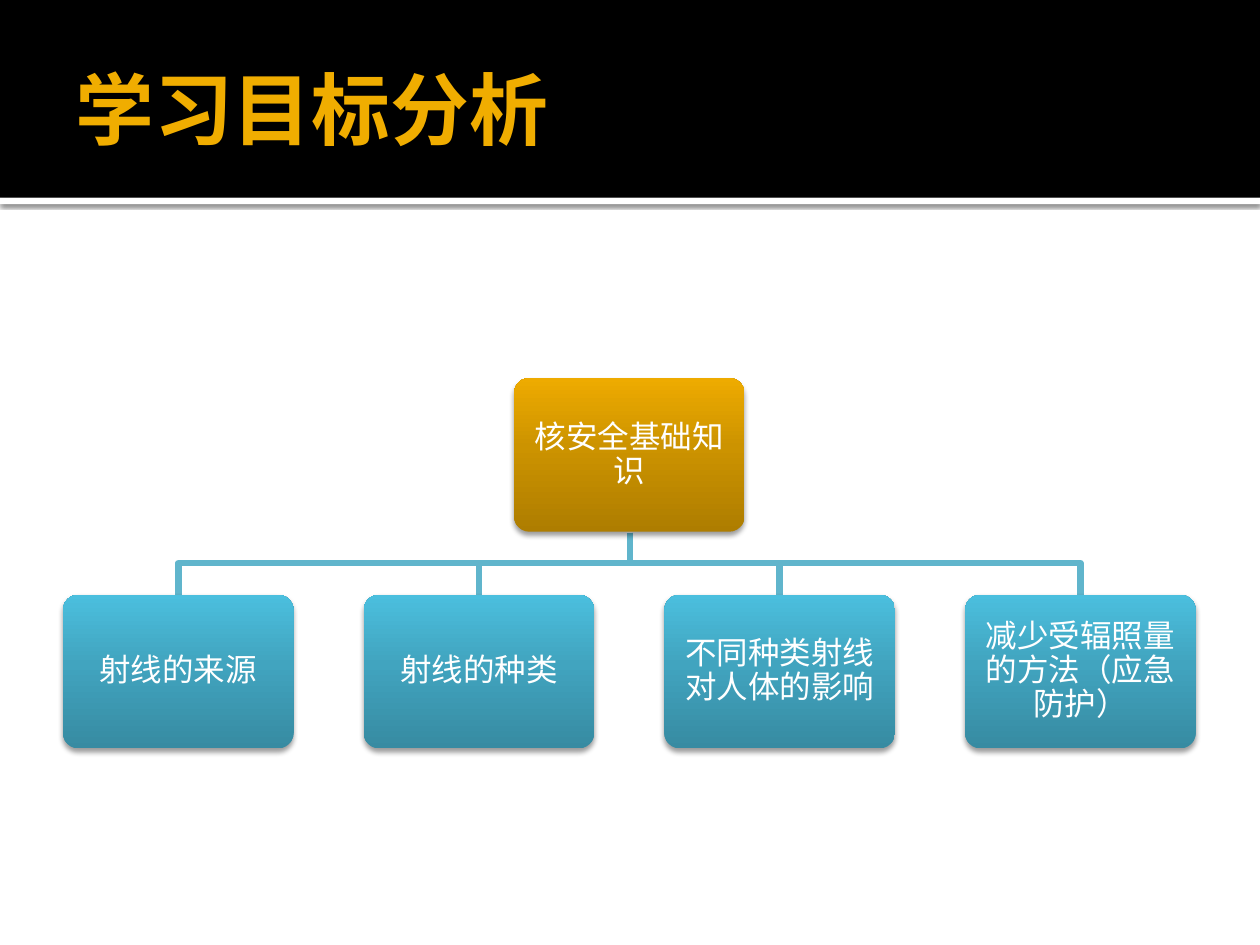
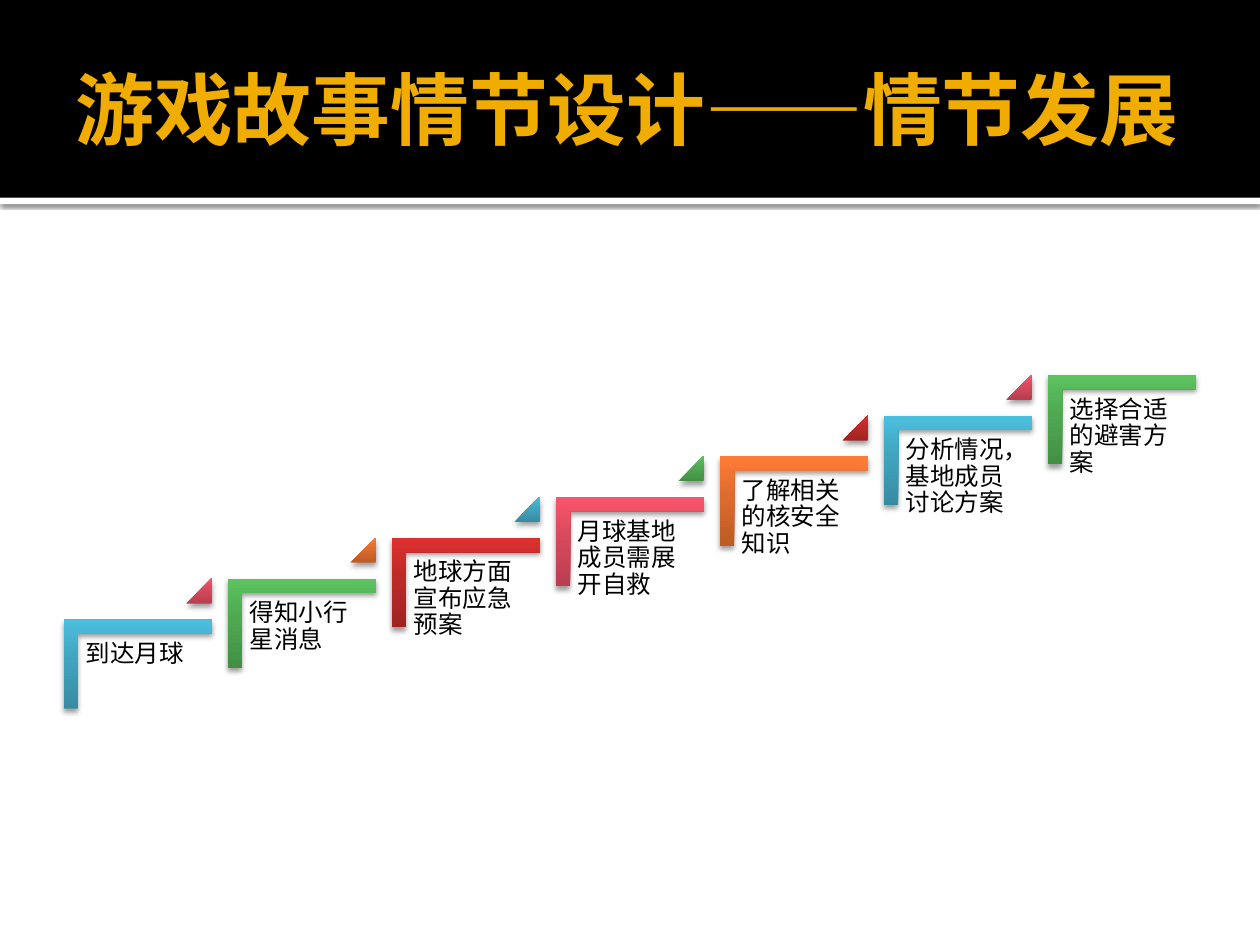
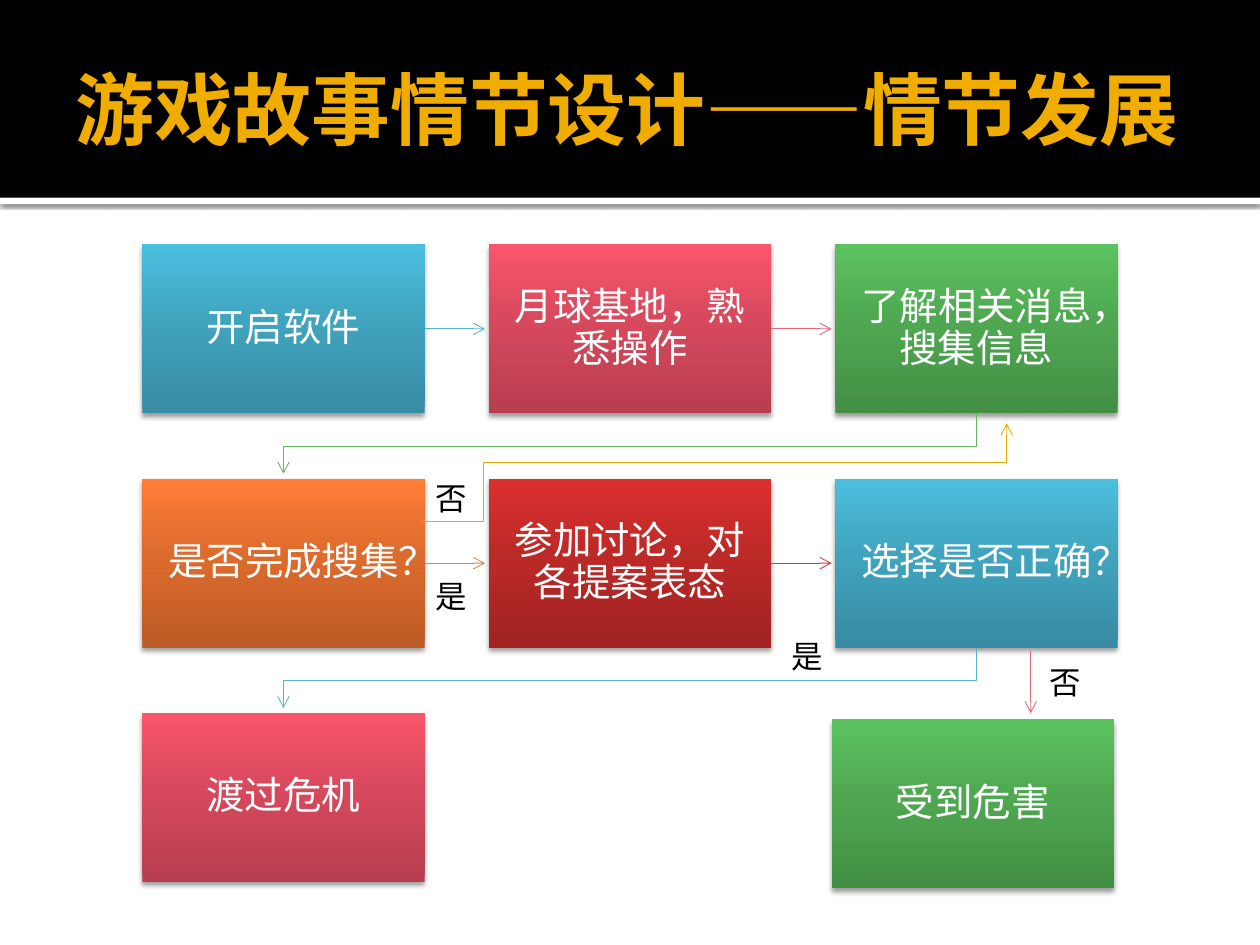
import copy
import pptx
import pptx.dml.color
import pptx.enum.shapes
import pptx.enum.text
import pptx.oxml.ns
import pptx.util
from lxml import etree

Inches = pptx.util.Inches
Pt = pptx.util.Pt
qn = pptx.oxml.ns.qn
hue = pptx.dml.color.RGBColor.from_string
Kind = pptx.enum.shapes.MSO_SHAPE
Link = pptx.enum.shapes.MSO_CONNECTOR
Align = pptx.enum.text.PP_ALIGN
Anchor = pptx.enum.text.MSO_ANCHOR

BLUE = ("378BA2", "41A4BF", "4BBFDE")
PINK = ("B73E4F", "D7495D", "FA556C")
GREEN = ("438F45", "4FA851", "5CC35F")
ORANGE = ("BC5B26", "DD6B2D", "FF7D37")
RED = ("A02322", "BC2A28", "DC302F")
GOLD = ("AE7D00", "CC9300", "EEAB00")
CYCLE = (BLUE, PINK, GREEN, ORANGE, RED)
SOFT = (38, 3.1, 2)
SIDES = ("margin_left", "margin_top", "margin_right", "margin_bottom")


def put(page, kind, box, tones=(), text="", look=None, shade=None):
    area = [Inches(n) for n in box]
    if kind is None:
        item = page.shapes.add_textbox(*area)
    else:
        item = page.shapes.add_shape(kind, *area)
        item.shadow.inherit = False
        item.line.fill.background()
    if len(tones) == 1:
        item.fill.solid()
        item.fill.fore_color.rgb = hue(tones[0])
    elif tones:
        item.fill.gradient()
        item.fill.gradient_angle = 90
        item.element.spPr.find(qn("a:gradFill")).set("rotWithShape", "0")
        first = item.element.spPr.find(".//" + qn("a:gs"))
        first.addnext(copy.deepcopy(first))
        for stop, tone, pos in zip(item.fill.gradient_stops, tones, (0, 0.55, 1)):
            stop.color.rgb = hue(tone)
            stop.position = pos
    if shade:
        alpha, blur, dist = shade
        glow = etree.SubElement(
            item.element.spPr.find(qn("a:effectLst")), qn("a:outerShdw"),
            blurRad=str(Pt(blur)), dist=str(Pt(dist)), dir="5400000", rotWithShape="0")
        black = etree.SubElement(glow, qn("a:srgbClr"), val="000000")
        etree.SubElement(black, qn("a:alpha"), val=str(alpha * 1000))
    if text:
        frame = item.text_frame
        line = frame.paragraphs[0]
        run = line.add_run()
        run.text = text
        run.font.name = "Calibri"
        run.font.color.rgb = hue(look["hue"])
        for part, key in ((frame, "frame"), (line, "line"), (run.font, "font")):
            for name, value in look[key].items():
                setattr(part, name, value)
    return item


def wire(page, dots, tone, wide=0.5, tip=True, kind=Link.STRAIGHT):
    dots = [(Inches(x), Inches(y)) for x, y in dots]
    if len(dots) == 2:
        item = page.shapes.add_connector(kind, *dots[0], *dots[1])
    else:
        pen = page.shapes.build_freeform(*dots[0])
        pen.add_line_segments(dots[1:], close=False)
        item = pen.convert_to_shape()
        item.fill.background()
    item.line.color.rgb = hue(tone)
    item.line.width = Pt(wide)
    trim = item.element.spPr
    if tip:
        etree.SubElement(trim.find(qn("a:ln")), qn("a:tailEnd"), type="arrow")
    etree.SubElement(trim, qn("a:effectLst"))
    return item


head = {
    "hue": "F0AD00",
    "frame": {"word_wrap": True, "vertical_anchor": Anchor.MIDDLE,
              **dict.fromkeys(SIDES, Inches(0.05)), "margin_left": Inches(0.1)},
    "line": {"alignment": Align.LEFT},
    "font": {"size": Pt(45), "bold": True},
}
node = {
    "hue": "FFFFFF",
    "frame": {"word_wrap": True, "vertical_anchor": Anchor.MIDDLE,
              **dict.fromkeys(SIDES, Inches(0.07))},
    "line": {"alignment": Align.CENTER, "line_spacing": 0.9},
    "font": {"size": Pt(18)},
}
stair = {
    "hue": "000000",
    "frame": {"word_wrap": True, **dict.fromkeys(SIDES, Inches(0.06))},
    "line": {"line_spacing": 0.9},
    "font": {"size": Pt(14)},
}
block = {
    **node,
    "frame": {**node["frame"], **dict.fromkeys(SIDES, Inches(0.17))},
    "font": {"size": Pt(22)},
}
label = {"hue": "000000", "frame": {"word_wrap": False}, "line": {},
         "font": {"size": Pt(18)}}

deck = pptx.Presentation()
deck.slide_width = Inches(10)
deck.slide_height = Inches(7.5)

pages = []
for title in ("学习目标分析", "游戏故事情节设计——情节发展", "游戏故事情节设计——情节发展"):
    page = deck.slides.add_slide(deck.slide_layouts[6])
    put(page, Kind.RECTANGLE, (0, 1.57, 10, 0.05), ("FFFFFF",), shade=(60, 2.5, 0.8))
    put(page, Kind.RECTANGLE, (0, 0, 10, 1.57), ("000000",))
    put(page, None, (0.5, 0.17, 9, 1.37), (), title, head)
    pages.append(page)
goals, story, flow = pages

wide, high = 1.83, 1.22
topics = ("射线的来源", "射线的种类", "不同种类射线对人体的影响", "减少受辐照量的方法（应急防护）")
lefts = [0.5 + 7.16 / 3 * i for i in range(len(topics))]
for left in lefts:
    mid = left + wide / 2
    wire(goals, [(5, 4.23), (5, 4.47), (mid, 4.47), (mid, 4.72)], "60B5CC", 3.78, False)
tree = [(4.08, 3, GOLD, "核安全基础知识")]
tree += [(left, 4.72, BLUE, topic) for left, topic in zip(lefts, topics)]
for left, top, tones, text in tree:
    item = put(goals, Kind.ROUNDED_RECTANGLE, (left, top, wide, high), tones, text, node, SOFT)
    item.adjustments[0] = 0.1

steps = ("到达月球", "得知小行星消息", "地球方面宣布应急预案", "月球基地成员需展开自救",
         "了解相关的核安全知识", "分析情况，基地成员讨论方案", "选择合适的避害方案")
last = len(steps) - 1
for i, text in enumerate(steps):
    left = 0.74 + 7.81 / last * i
    top = 4.68 - 1.94 / last * i
    item = put(story, Kind.CORNER, (left, top, 0.71, 1.18), CYCLE[2 * i % 5], shade=SOFT)
    item.rotation = 90
    item.adjustments[0] = item.adjustments[1] = 0.16
    put(story, None, (left - 0.12, top + 0.35, 1.06, 0.93), (), text, stair)
    if i < last:
        item = put(story, Kind.ISOSCELES_TRIANGLE, (left + 0.74, top - 0.09, 0.2, 0.2),
                   CYCLE[(2 * i + 1) % 5], shade=SOFT)
        item.adjustments[0] = 1

wide, high = 2.24, 1.34
tasks = ("开启软件", "月球基地，熟悉操作", "了解相关消息，搜集信息", "是否完成搜集？",
         "参加讨论，对各提案表态", "选择是否正确？", "渡过危机", "受到危害")
spots = [(1.13 + 2.75 * (i % 3), 1.94 + 1.86 * (i // 3)) for i in range(7)]
spots.append((6.6, 5.71))
lines = ("5BB3CA", "E46778", "67B569", "E7824C", "C54342")
cells = []
for i, (text, (left, top)) in enumerate(zip(tasks, spots)):
    cells.append(put(flow, Kind.RECTANGLE, (left, top, wide, high), CYCLE[i % 5],
                     text, block, SOFT))
for i, (left, top) in enumerate(spots[:6]):
    if i % 3 < 2:
        mid = top + high / 2
        item = wire(flow, [(left + wide, mid), (left + 2.72, mid)], lines[i])
        item.begin_connect(cells[i], 3)
    else:
        base = top + high
        wire(flow, [(7.75, base), (7.75, base + 0.26), (2.25, base + 0.26),
                    (2.25, base + 0.48)], lines[i % 5])
wire(flow, [(8.18, 5.17), (8.18, 5.66)], "E46778")
back = wire(flow, [(3.35, 4.14), (7.99, 3.67)], "EBA900", tip=False, kind=Link.ELBOW)
etree.SubElement(back.element.spPr.find(".//" + qn("a:avLst")), qn("a:gd"),
                 name="adj1", fmla="val 10500")
wire(flow, [(7.99, 3.67), (7.99, 3.36)], "EBA900")
for left, top, text in ((3.36, 4.53, "是"), (3.36, 3.75, "否"),
                        (6.18, 5.01, "是"), (8.23, 5.21, "否")):
    put(flow, None, (left, top, 0.45, 0.4), (), text, label)

deck.save("out.pptx")
